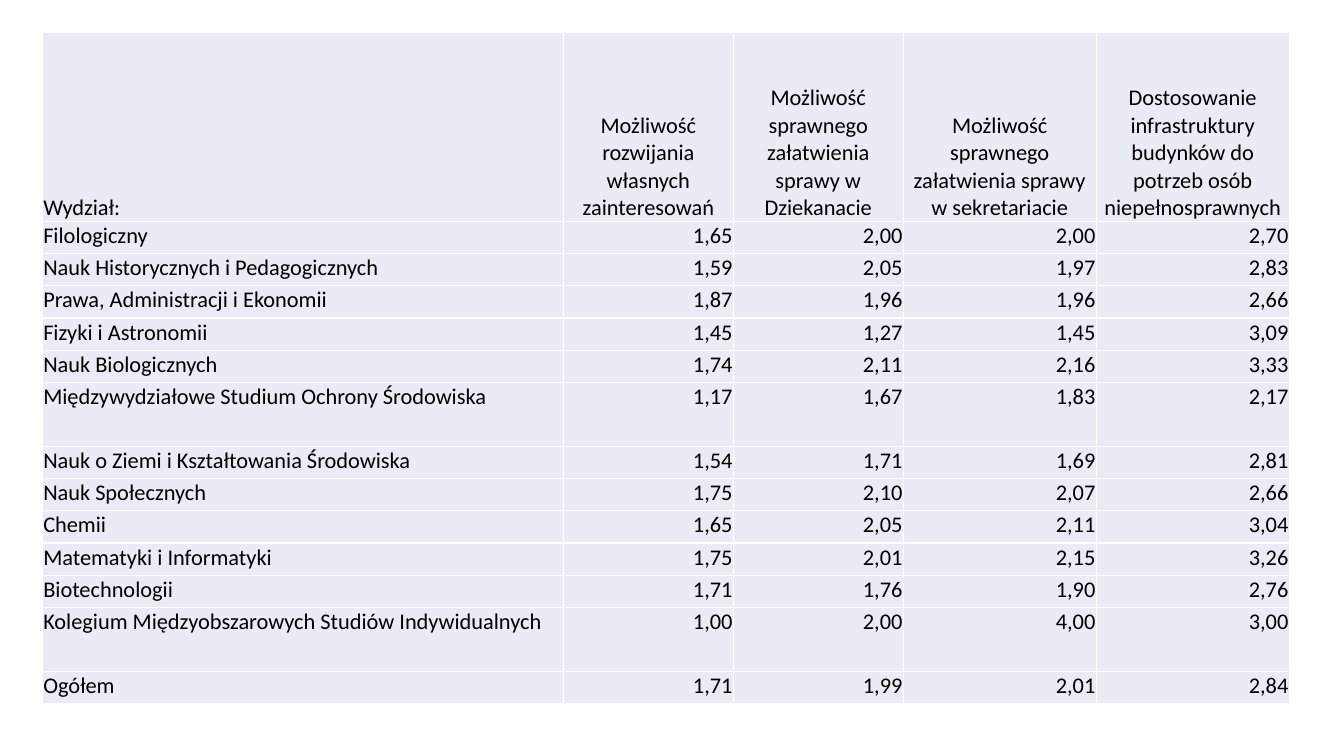
from lxml import etree
from pptx import Presentation
from pptx import util as u
from pptx.dml.color import RGBColor
from pptx.enum import text
from pptx.oxml import ns

HUES = {"ink": "000000", "fill": "E9EBF5", "edge": "FFFFFF"}
COLS = [13.12, 4.28, 4.28, 4.86, 4.86]
HEAD, ROW, TALL = 4.75, 0.81, 1.61
TALLS = (6, 12)
DATA = [
    ("Wydział:", "Możliwość rozwijania własnych zainteresowań",
     "Możliwość sprawnego załatwienia sprawy w Dziekanacie",
     "Możliwość sprawnego załatwienia sprawy w sekretariacie",
     "Dostosowanie infrastruktury budynków do potrzeb osób niepełnosprawnych"),
    ("Filologiczny", "1,65", "2,00", "2,00", "2,70"),
    ("Nauk Historycznych i Pedagogicznych", "1,59", "2,05", "1,97", "2,83"),
    ("Prawa, Administracji i Ekonomii", "1,87", "1,96", "1,96", "2,66"),
    ("Fizyki i Astronomii", "1,45", "1,27", "1,45", "3,09"),
    ("Nauk Biologicznych", "1,74", "2,11", "2,16", "3,33"),
    ("Międzywydziałowe Studium Ochrony Środowiska", "1,17", "1,67", "1,83", "2,17"),
    ("Nauk o Ziemi i Kształtowania Środowiska", "1,54", "1,71", "1,69", "2,81"),
    ("Nauk Społecznych", "1,75", "2,10", "2,07", "2,66"),
    ("Chemii", "1,65", "2,05", "2,11", "3,04"),
    ("Matematyki i Informatyki", "1,75", "2,01", "2,15", "3,26"),
    ("Biotechnologii", "1,71", "1,76", "1,90", "2,76"),
    ("Kolegium Międzyobszarowych Studiów Indywidualnych", "1,00", "2,00", "4,00", "3,00"),
    ("Ogółem", "1,71", "1,99", "2,01", "2,84"),
]


def edge(cell):
    """Draw thin lines on all four sides of a cell."""
    props = cell._tc.get_or_add_tcPr()
    for side in ("a:lnL", "a:lnR", "a:lnT", "a:lnB"):
        line = etree.SubElement(props, ns.qn(side), w=str(u.Pt(1)))
        fill = etree.SubElement(line, ns.qn("a:solidFill"))
        etree.SubElement(fill, ns.qn("a:srgbClr"), val=HUES["edge"])


def write(cell, words, head, align):
    """Style one cell and put its words in."""
    edge(cell)
    cell.fill.solid()
    cell.fill.fore_color.rgb = RGBColor.from_string(HUES["fill"])
    cell.margin_left = cell.margin_right = cell.margin_top = u.Cm(0.02)
    cell.margin_bottom = u.Cm(0)
    anchor = text.MSO_ANCHOR
    cell.vertical_anchor = anchor.BOTTOM if head else anchor.TOP
    para = cell.text_frame.paragraphs[0]
    para.alignment = align
    run = para.add_run()
    run.text = words
    run.font.name = "Calibri"
    run.font.size = u.Pt(16)
    run.font.color.rgb = RGBColor.from_string(HUES["ink"])


def grid(slide, left, top, width, height):
    """Place the table of faculty scores in the given box."""
    box = [u.Cm(size) for size in (left, top, width, height)]
    table = slide.shapes.add_table(len(DATA), len(COLS), *box).table
    table.first_row = table.horz_banding = False
    for col, size in zip(table.columns, COLS):
        col.width = u.Cm(size * width / sum(COLS))
    highs = [HEAD] + [TALL if i in TALLS else ROW for i in range(1, len(DATA))]
    for row, size in zip(table.rows, highs):
        row.height = u.Cm(size * height / sum(highs))
    side = text.PP_ALIGN
    for i, line in enumerate(DATA):
        for j, words in enumerate(line):
            align = side.LEFT if j == 0 else side.RIGHT if i else side.CENTER
            write(table.cell(i, j), words, i == 0, align)


def main():
    """Build the slide and save it."""
    deck = Presentation()
    deck.slide_width, deck.slide_height = u.Cm(33.87), u.Cm(19.05)
    slide = deck.slides.add_slide(deck.slide_layouts[6])
    grid(slide, 1.07, 0.82, 31.42, 16.92)
    deck.save("out.pptx")


if __name__ == "__main__":
    main()
